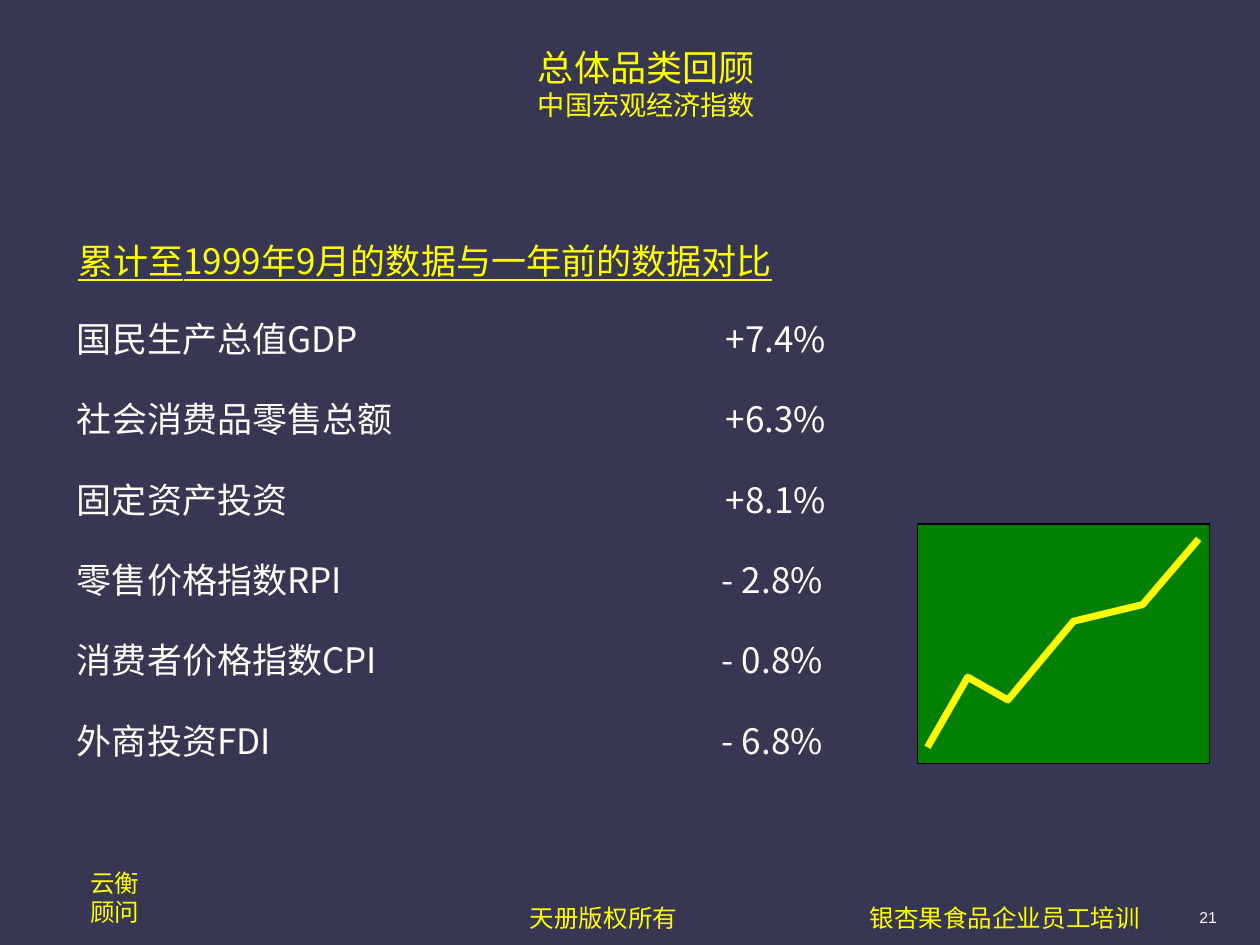
from pptx import Presentation
from pptx.dml.color import RGBColor
from pptx.enum.shapes import MSO_SHAPE as Shape
from pptx.enum.text import MSO_ANCHOR as Anchor, MSO_AUTO_SIZE as AutoSize, PP_ALIGN as Align
from pptx.oxml.ns import qn
from pptx.util import Pt
from lxml.etree import SubElement

CJK = "Noto Sans CJK SC"
YELLOW, WHITE, GREEN, BLACK, NAVY = "FFFF00", "FFFFFF", "008000", "000000", "373753"

# label, label width, value
INDICATORS = [
    ("国民生产总值GDP", 162, "+7.4%"),
    ("社会消费品零售总额", 182, "+6.3%"),
    ("固定资产投资", 122, "+8.1%"),
    ("零售价格指数RPI", 152, "- 2.8%"),
    ("消费者价格指数CPI", 172, "- 0.8%"),
    ("外商投资FDI", 111, "- 6.8%"),
]
TREND = [(530, 427), (553, 387), (576, 400), (613.5, 355), (653, 345.5), (685, 308)]


def rgb(color):
    return RGBColor.from_string(color)


def set_font(font, size, color, name=CJK):
    """Format a font, for Latin and East Asian letters alike."""
    font.size = Pt(size)
    font.color.rgb = rgb(color)
    font.name = name
    SubElement(font._element, qn("a:ea"), typeface=name)


def set_margins(frame, margin):
    frame.margin_left = frame.margin_right = Pt(margin)
    frame.margin_top = frame.margin_bottom = Pt(margin)


def add_text(shapes, place, lines, size, color, name=CJK, align=Align.LEFT, margin=0, wrap=False):
    """Add a text box at place (left, top, width, height); return its paragraphs."""
    frame = shapes.add_textbox(*map(Pt, place)).text_frame
    frame.word_wrap = wrap
    frame.auto_size = AutoSize.SHAPE_TO_FIT_TEXT
    set_margins(frame, margin)
    frame.text = "\n".join(lines)
    for para in frame.paragraphs:
        para.alignment = align
        set_font(para.font, size, color, name)
    return frame.paragraphs


def fill_title(title):
    title.left, title.top, title.width, title.height = map(Pt, (18.7, 20.2, 701.3, 54.7))
    frame = title.text_frame
    frame.word_wrap = True
    frame.auto_size = AutoSize.NONE
    frame.vertical_anchor = Anchor.MIDDLE
    set_margins(frame, 2)
    para = frame.paragraphs[0]
    para.alignment = Align.CENTER
    para.line_spacing = 1.0
    heading = para.add_run()
    heading.text = "总体品类回顾"
    set_font(heading.font, 20.6, YELLOW)
    para.add_line_break()
    subheading = para.add_run()
    subheading.text = "中国宏观经济指数"
    set_font(subheading.font, 15.5, YELLOW)


def add_footer(shapes):
    footers = [
        ((47.5, 492.5, 36, 47.5), ["云衡", "顾问"]),
        ((298.8, 512.6, 92.2, 27.4), ["天册版权所有"]),
        ((493.2, 512.6, 162, 27.4), ["银杏果食品企业员工培训"]),
    ]
    for place, lines in footers:
        add_text(shapes, place, lines, 14, YELLOW, align=Align.CENTER, margin=3.6)
    number = add_text(shapes, (681, 516.2, 18, 16.6), ["21"], 9, WHITE,
                      name="Arial", align=Align.RIGHT, margin=3.6)
    number[0].line_spacing = 0.9


def add_trend(shapes):
    group = shapes.add_group_shape().shapes
    panel = group.add_shape(Shape.RECTANGLE, *map(Pt, (524.2, 299.5, 167, 136.8)))
    panel.fill.solid()
    panel.fill.fore_color.rgb = rgb(GREEN)
    builder = group.build_freeform(*map(Pt, TREND[0]))
    builder.add_line_segments([(Pt(x), Pt(y)) for x, y in TREND[1:]], close=False)
    curve = builder.convert_to_shape()
    curve.fill.background()
    for shape, color, width in ((panel, BLACK, 1), (curve, YELLOW, 4)):
        shape.shadow.inherit = False
        shape.line.color.rgb = rgb(color)
        shape.line.width = Pt(width)


def add_indicators(shapes):
    group = shapes.add_group_shape().shapes
    for row, (label, width, value) in enumerate(INDICATORS):
        top = 181.5 + 45.9 * row
        value_left = 414.7 if value.startswith("+") else 412.5
        add_text(group, (44, top, width, 28), [label], 20, WHITE, wrap=True)
        add_text(group, (value_left, top, 59, 24), [value], 20, WHITE)


def main():
    deck = Presentation()
    deck.slide_width, deck.slide_height = Pt(720), Pt(540)
    slide = deck.slides.add_slide(deck.slide_layouts.get_by_name("Title Only"))
    slide.background.fill.solid()
    slide.background.fill.fore_color.rgb = rgb(NAVY)
    shapes = slide.shapes
    add_footer(shapes)
    fill_title(shapes.title)
    add_trend(shapes)
    caption = add_text(shapes, (44.8, 136.8, 479.5, 29), ["累计至1999年9月的数据与一年前的数据对比"],
                       20, YELLOW, wrap=True)
    caption[0].font.underline = True
    add_indicators(shapes)
    deck.save("out.pptx")


if __name__ == "__main__":
    main()
